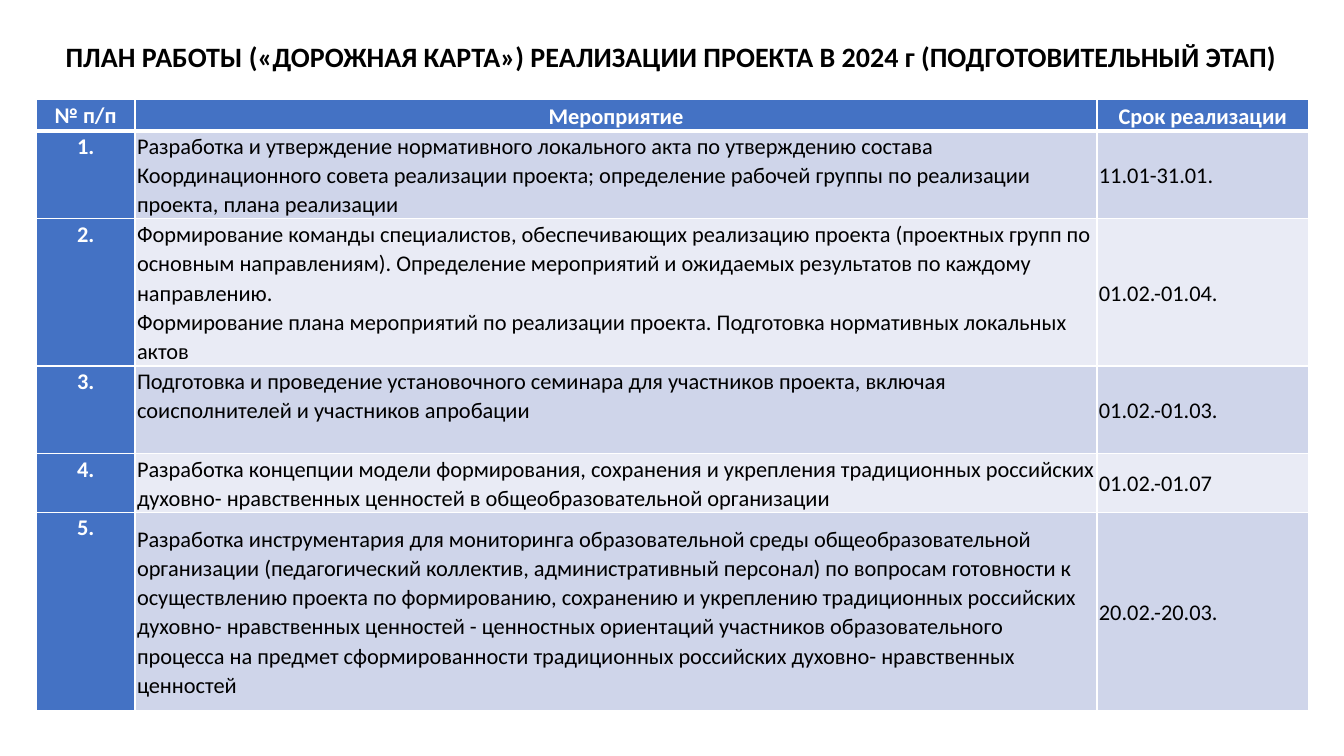
from lxml.etree import SubElement
from pptx import Presentation
from pptx.dml.color import RGBColor
from pptx.enum.text import MSO_ANCHOR, MSO_AUTO_SIZE, PP_ALIGN
from pptx.oxml.ns import qn
from pptx.util import Inches, Pt

COLORS = {
    "header": "4472C4",
    "odd": "CFD5EA",
    "even": "E9EBF5",
    "white": "FFFFFF",
    "black": "000000",
}
TITLE = "ПЛАН РАБОТЫ («ДОРОЖНАЯ КАРТА») РЕАЛИЗАЦИИ ПРОЕКТА В 2024 г (ПОДГОТОВИТЕЛЬНЫЙ ЭТАП)"
HEADINGS = ["№ п/п", "Мероприятие", "Срок реализации"]
# Each activity: paragraphs, dates
ACTIVITIES = [
    (["Разработка и утверждение нормативного локального акта по утверждению состава "
      "Координационного совета реализации проекта; определение рабочей группы по реализации "
      "проекта, плана реализации"], "11.01-31.01."),
    (["Формирование команды специалистов, обеспечивающих реализацию проекта (проектных групп по "
      "основным направлениям). Определение мероприятий и ожидаемых результатов по каждому "
      "направлению.",
      "Формирование плана мероприятий по реализации проекта. Подготовка нормативных локальных "
      "актов"], "01.02.-01.04."),
    (["Подготовка и проведение установочного семинара для участников проекта, включая "
      "соисполнителей и участников апробации"], "01.02.-01.03."),
    (["Разработка концепции модели формирования, сохранения и укрепления традиционных "
      "российских духовно- нравственных ценностей в общеобразовательной организации"],
     "01.02.-01.07"),
    (["Разработка инструментария для мониторинга образовательной среды общеобразовательной "
      "организации (педагогический коллектив, административный персонал) по вопросам готовности к "
      "осуществлению проекта по формированию, сохранению и укреплению традиционных российских "
      "духовно- нравственных ценностей - ценностных ориентаций участников образовательного "
      "процесса на предмет сформированности традиционных российских духовно- нравственных "
      "ценностей"], "20.02.-20.03."),
]
SEMINAR_ROW = 3
# Percent of the slide's width and height
COLUMN_SHARES = [7.35, 71.57, 15.75]
ROW_SHARES = [4.13, 11.6, 19.47, 11.6, 7.73, 26.27]


class SlideBuilder:
    """Holds the text style and the current slide; lengths are percent of its size."""

    font = "Calibri"

    def __init__(self, presentation):
        self.width = presentation.slide_width
        self.height = presentation.slide_height
        self.slide = presentation.slides.add_slide(presentation.slide_layouts[5])

    def across(self, share):
        return round(self.width * share / 100)

    def down(self, share):
        return round(self.height * share / 100)

    def add_text(self, frame, texts, size, color, bold, alignment, spacing):
        for index, text in enumerate(texts):
            paragraph = frame.add_paragraph() if index else frame.paragraphs[0]
            paragraph.alignment = alignment
            paragraph.line_spacing = spacing
            run = paragraph.add_run()
            run.text = text
            run.font.name = self.font
            run.font.size = Pt(size)
            run.font.bold = bold
            run.font.color.rgb = RGBColor.from_string(COLORS[color])

    def title(self, text, left, top, width, height):
        shape = self.slide.shapes.title
        shape.left, shape.top = self.across(left), self.down(top)
        shape.width, shape.height = self.across(width), self.down(height)
        frame = shape.text_frame
        frame.word_wrap = True
        frame.auto_size = MSO_AUTO_SIZE.NONE
        frame.vertical_anchor = MSO_ANCHOR.MIDDLE
        self.add_text(frame, [text], 20, "black", True, PP_ALIGN.LEFT, 0.9)

    def table(self, left, top, columns, rows):
        frame = self.slide.shapes.add_table(
            len(rows), len(columns), self.across(left), self.down(top),
            self.across(sum(columns)), self.down(sum(rows)))
        table = frame.table
        table.first_col = True
        for column, share in zip(table.columns, columns):
            column.width = self.across(share)
        for row, share in zip(table.rows, rows):
            row.height = self.down(share)
        return table

    def borders(self, cell, **widths):
        """Draw white borders; widths are points keyed by side L, R, T, B."""
        properties = cell._tc.get_or_add_tcPr()
        for side, width in widths.items():
            line = SubElement(properties, qn(f"a:ln{side}"), w=str(Pt(width)))
            fill = SubElement(line, qn("a:solidFill"))
            SubElement(fill, qn("a:srgbClr"), val=COLORS["white"])

    def cell(self, table, row, column, texts, top_anchor=False):
        cell = table.cell(row, column)
        heading = row == 0 or column == 0
        cell.margin_left = cell.margin_right = Inches(0.02)
        cell.margin_top = cell.margin_bottom = 0
        cell.vertical_anchor = MSO_ANCHOR.TOP if top_anchor else MSO_ANCHOR.MIDDLE
        self.borders(cell, L=1, R=1, T=3 if row == 1 else 1, B=3 if row == 0 else 1)
        band = "odd" if row % 2 else "even"
        cell.fill.solid()
        cell.fill.fore_color.rgb = RGBColor.from_string(COLORS["header" if heading else band])
        self.add_text(cell.text_frame, texts, 16, "white" if heading else "black", heading,
                      PP_ALIGN.CENTER if heading else PP_ALIGN.LEFT, 1.07)


def main():
    presentation = Presentation()
    presentation.slide_width = Inches(13.33)
    presentation.slide_height = Inches(7.5)
    builder = SlideBuilder(presentation)
    builder.title(TITLE, 4.13, 4, 92.42, 7.33)
    table = builder.table(2.7, 13.2, COLUMN_SHARES, ROW_SHARES)
    for column, heading in enumerate(HEADINGS):
        builder.cell(table, 0, column, [heading], top_anchor=column == 0)
    for row, (activity, dates) in enumerate(ACTIVITIES, start=1):
        builder.cell(table, row, 0, [f"{row}."], top_anchor=True)
        builder.cell(table, row, 1, activity, top_anchor=row == SEMINAR_ROW)
        builder.cell(table, row, 2, [dates])
    presentation.save("out.pptx")


if __name__ == "__main__":
    main()
